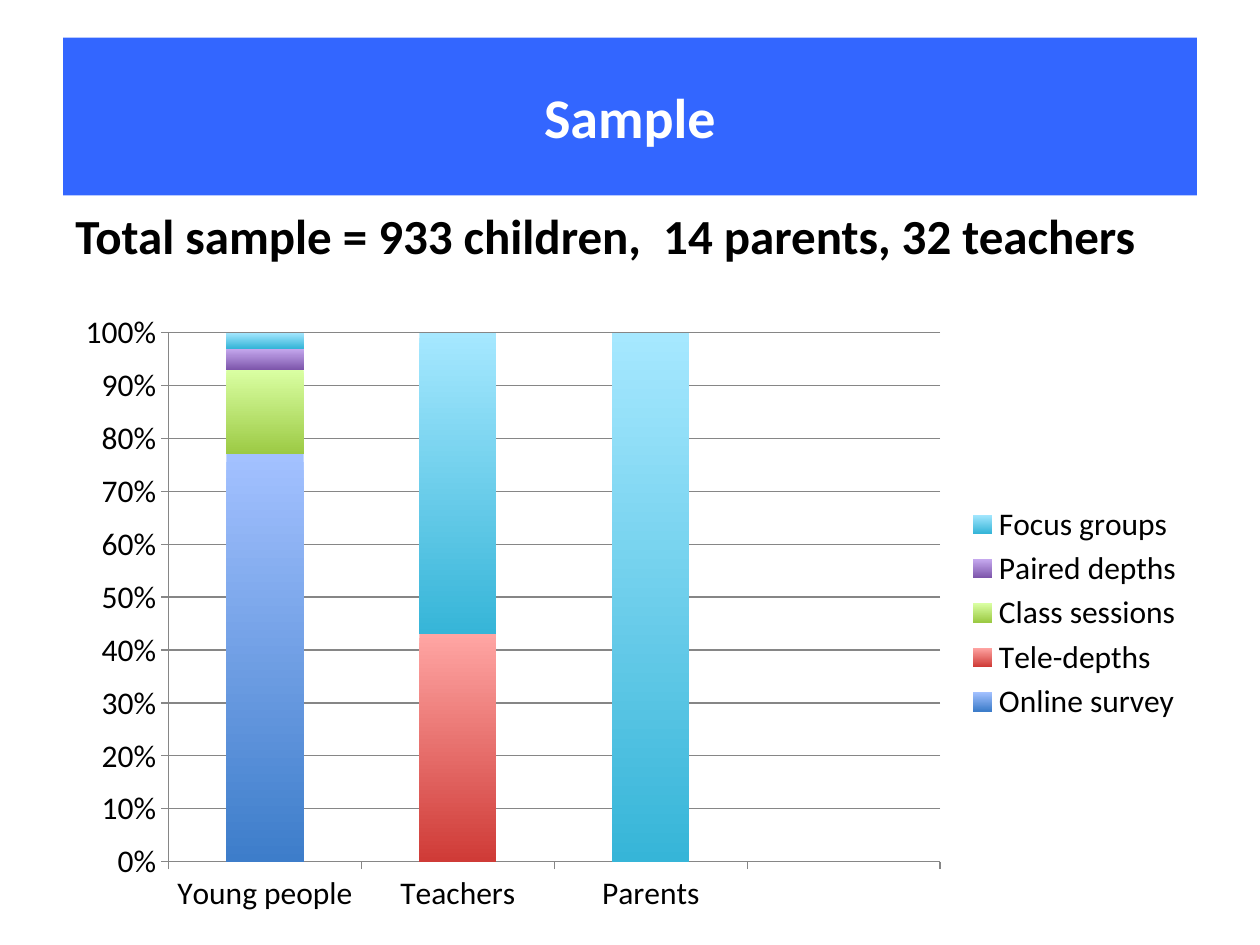
import pptx
import pptx.chart.data
import pptx.dml.color
import pptx.enum.chart
import pptx.enum.text
import pptx.util
from pptx.util import Cm, Pt

FONT = "Calibri"
TITLE = "Sample"
SUMMARY = "Total sample = 933 children,  14 parents, 32 teachers"
GROUPS = ["Young people", "Teachers", "Parents", ""]
# method, values by group, gradient from top to bottom
METHODS = [
    ("Online survey", (77, 0, 0, None), ("A3C1FF", "3D7DCA")),
    ("Tele-depths", (0, 43, 0, None), ("FFA5A3", "CF3B37")),
    ("Class sessions", (16, 0, 0, None), ("DAFFA3", "9CCA44")),
    ("Paired depths", (4, 0, 0, None), ("C7AAF0", "7D56AB")),
    ("Focus groups", (3, 57, 100, None), ("A6E8FF", "36B5D8")),
]
LEFT, WIDTH = Cm(1.27), Cm(22.86)


def colour(value):
    return pptx.dml.color.RGBColor.from_string(value)


def write(shape, text, size, text_colour, alignment):
    frame = shape.text_frame
    frame.text = text
    frame.word_wrap = True
    paragraph = frame.paragraphs[0]
    paragraph.alignment = alignment
    font = paragraph.runs[0].font
    font.name, font.size, font.bold = FONT, Pt(size), True
    font.color.rgb = colour(text_colour)


def add_title(slide):
    title = slide.shapes.title
    title.left, title.top, title.width, title.height = LEFT, Cm(0.76), WIDTH, Cm(3.18)
    title.fill.solid()
    title.fill.fore_color.rgb = colour("3366FF")
    write(title, TITLE, 32, "FFFFFF", pptx.enum.text.PP_ALIGN.CENTER)
    title.text_frame.vertical_anchor = pptx.enum.text.MSO_ANCHOR.MIDDLE


def add_summary(slide):
    box = slide.shapes.add_textbox(LEFT, Cm(4.01), WIDTH, Cm(1.45))
    write(box, SUMMARY, 28, "000000", pptx.enum.text.PP_ALIGN.LEFT)
    box.text_frame.auto_size = pptx.enum.text.MSO_AUTO_SIZE.SHAPE_TO_FIT_TEXT


def add_sample_chart(slide):
    data = pptx.chart.data.CategoryChartData()
    data.categories = GROUPS
    for name, values, _ in METHODS:
        data.add_series(name, values)
    chart = slide.shapes.add_chart(
        pptx.enum.chart.XL_CHART_TYPE.COLUMN_STACKED_100,
        LEFT, Cm(6.07), WIDTH, Cm(12.57), data).chart
    chart.has_title = False
    chart.font.name, chart.font.size = FONT, Pt(18)
    chart.font.color.rgb = colour("000000")

    chart.has_legend = True
    chart.legend.position = pptx.enum.chart.XL_LEGEND_POSITION.RIGHT
    chart.legend.include_in_layout = False

    plot = chart.plots[0]
    plot.gap_width, plot.overlap = 150, 100
    plot.vary_by_categories = False
    for series, (_, _, gradient) in zip(plot.series, METHODS):
        fill = series.format.fill
        fill.gradient()
        fill.gradient_angle = 270
        for position, (stop, value) in enumerate(zip(fill.gradient_stops, gradient)):
            stop.position = position
            stop.color.rgb = colour(value)

    value_axis = chart.value_axis
    value_axis.has_major_gridlines = True
    value_axis.minimum_scale, value_axis.maximum_scale = 0, 1
    value_axis.major_unit = 0.1
    value_axis.tick_labels.number_format = "0%"
    value_axis.tick_labels.number_format_is_linked = False
    for axis in (chart.category_axis, value_axis):
        axis.major_tick_mark = pptx.enum.chart.XL_TICK_MARK.OUTSIDE
    for part in (chart.category_axis, value_axis, value_axis.major_gridlines):
        part.format.line.color.rgb = colour("868686")
        part.format.line.width = Pt(0.75)


def main():
    presentation = pptx.Presentation()
    presentation.slide_width, presentation.slide_height = Cm(25.4), Cm(19.05)
    slide = presentation.slides.add_slide(presentation.slide_layouts[5])
    add_title(slide)
    add_sample_chart(slide)
    add_summary(slide)
    presentation.save("out.pptx")


if __name__ == "__main__":
    main()
